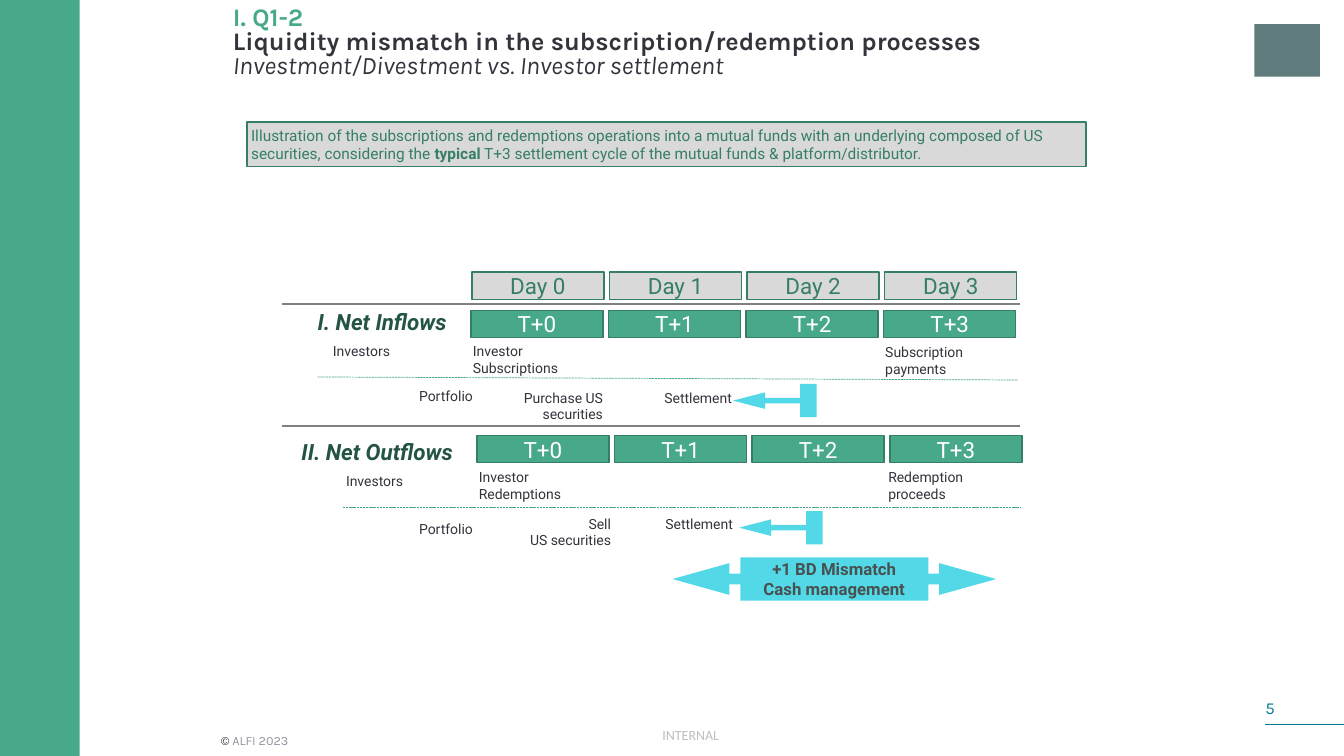
from lxml.etree import SubElement
from pptx import Presentation
from pptx.dml.color import RGBColor
from pptx.enum.dml import MSO_LINE
from pptx.enum.shapes import MSO_CONNECTOR, MSO_SHAPE
from pptx.enum.text import MSO_ANCHOR, PP_ALIGN
from pptx.oxml.ns import qn
from pptx.util import Inches, Pt

THEME = {
    "color": {
        "green": "48A88A", "edge": "367E68", "pine": "245445", "ink": "35323C",
        "mist": "9792A4", "pale": "BFBFBF", "gray": "D9D9D9", "rule": "808080",
        "cyan": "52D8E6", "slate": "495050", "teal": "007C92", "logo": "5F7B7C",
        "white": "FFFFFF",
    },
    # style: colour, then font format values
    "type": {
        "part": ("green", dict(name="Karla", size=Pt(18), bold=True)),
        "title": ("ink", dict(name="Karla", size=Pt(18), bold=True)),
        "sub": ("ink", dict(name="Karla", size=Pt(18), italic=True)),
        "intro": ("edge", dict(name="Roboto", size=Pt(11))),
        "strong": ("edge", dict(name="Roboto", size=Pt(11), bold=True)),
        "day": ("edge", dict(name="Roboto", size=Pt(16))),
        "step": ("white", dict(name="Roboto", size=Pt(16))),
        "flow": ("pine", dict(name="Roboto", size=Pt(16), bold=True, italic=True)),
        "label": ("ink", dict(name="Roboto", size=Pt(10))),
        "gap": ("slate", dict(name="Roboto", size=Pt(12), bold=True)),
        "mark": ("pale", dict(name="Calibri", size=Pt(10))),
        "sign": ("ink", dict(name="Karla", size=Pt(9))),
        "owner": ("mist", dict(name="Karla", size=Pt(9))),
        "page": ("teal", dict(name="Karla", size=Pt(12))),
    },
}
CELL = Inches(0.1)  # the slide is a grid of 133.3 columns by 75 rows
COLS, ROWS = 133.3, 75
LEFT, MID, RIGHT = PP_ALIGN.LEFT, PP_ALIGN.CENTER, PP_ALIGN.RIGHT
RECT = MSO_SHAPE.RECTANGLE

deck = Presentation()
deck.slide_width, deck.slide_height = Inches(13.33), Inches(7.5)
slide = deck.slides.add_slide(deck.slide_layouts[6])


def put(at, paras=(), align=LEFT, kind=None, fill=None, edge=None,
        anchor=MSO_ANCHOR.TOP, pad=0, adjust=()):
    """Add a text box, or a shape if kind is given; paras hold (text, style) runs."""
    spot = [round(n * CELL) for n in at]
    if kind is None:
        item = slide.shapes.add_textbox(*spot)
    else:
        item = slide.shapes.add_shape(kind, *spot)
        item.shadow.inherit = False
        item.fill.solid()
        item.fill.fore_color.rgb = RGBColor.from_string(THEME["color"][fill])
        if edge:
            item.line.color.rgb = RGBColor.from_string(THEME["color"][edge])
            item.line.width = Pt(1)
        else:
            item.line.fill.background()
        for i, part in enumerate(adjust):
            item.adjustments[i] = part
    frame = item.text_frame
    look = dict(word_wrap=True, vertical_anchor=anchor, margin_left=pad * CELL,
                margin_right=pad * CELL, margin_top=0, margin_bottom=0)
    for key, val in look.items():
        setattr(frame, key, int(val) if "margin" in key else val)
    for i, runs in enumerate(paras):
        para = frame.add_paragraph() if i else frame.paragraphs[0]
        para.alignment = align
        for text, style in runs:
            run = para.add_run()
            run.text = text
            tint, form = THEME["type"][style]
            run.font.color.rgb = RGBColor.from_string(THEME["color"][tint])
            for key, val in form.items():
                setattr(run.font, key, val)
    return item


def rule(ends, tint, width, dash=None):
    line = slide.shapes.add_connector(
        MSO_CONNECTOR.STRAIGHT, *[round(n * CELL) for n in ends])
    line.line.color.rgb = RGBColor.from_string(THEME["color"][tint])
    line.line.width = Pt(width)
    if dash:
        line.line.dash_style = dash
    SubElement(line._element.spPr, qn("a:effectLst"))


# Frame of the slide
put((0, 0, 7.9, ROWS), kind=RECT, fill="green")
put((124.4, 2.4, 6.5, 5.2), kind=RECT, fill="logo")
put((125.5, 69.2, 3, 2), [[("5", "page")]], anchor=MSO_ANCHOR.MIDDLE)
rule((COLS, 71.9, 125.5, 71.9), "teal", 0.5)
put((65.7, 72.1, 7, 1.7), [[("INTERNAL", "mark")]])
put((21.9, 72.1, 30.5, 2.7), [[("© ", "sign"), ("ALFI 2023", "owner")]],
    anchor=MSO_ANCHOR.MIDDLE)

title = put((23.1, 2.5, 84.1, 5.4), [
    [("I. Q1-2", "part")],
    [("Liquidity mismatch in the subscription/redemption processes ", "title"),
     ("Investment/Divestment vs. Investor settlement", "sub")],
], anchor=MSO_ANCHOR.BOTTOM)
for para in title.text_frame.paragraphs:
    para.line_spacing = 0.8

put((24.5, 12.1, 83.2, 4.4), [[
    ("Illustration of the subscriptions and redemptions operations into a mutual "
     "funds with an underlying composed of US securities, considering the ", "intro"),
    ("typical", "strong"),
    (" T+3 settlement cycle of the mutual funds & platform/distributor.", "intro"),
]], kind=RECT, fill="gray", edge="edge", anchor=MSO_ANCHOR.MIDDLE, pad=0.4)

# Day and step boxes, four to a row
STEP, WIDE, HIGH = 13.65, 13.1, 2.7
for left, top, word, style, fill in [
    (46.8, 27, "Day ", "day", "gray"),
    (46.7, 30.8, "T+", "step", "green"),
    (47.3, 43.2, "T+", "step", "green"),
]:
    for day in range(4):
        put((left + day * STEP, top, WIDE, HIGH), [[(f"{word}{day}", style)]], MID,
            RECT, fill, "edge", MSO_ANCHOR.MIDDLE)

# Lane headings, labels and settlement arrows
for text, left, top in [("I. Net Inflows", 31.5, 30.6),
                        ("II. Net Outflows", 29.9, 43.5)]:
    put((left, top, 17, HIGH), [[(text, "flow")]])

for lines, left, top, width, align in [
    (["Investors"], 29.3, 34, WIDE, MID),
    (["Investor Subscriptions"], 46.9, 34, WIDE, LEFT),
    (["Subscription payments"], 87.8, 34.1, WIDE, LEFT),
    (["Portfolio"], 33.8, 38.4, WIDE, RIGHT),
    (["Purchase US securities"], 51.2, 38.6, 8.6, RIGHT),
    (["Settlement"], 65.9, 38.6, 8.7, LEFT),
    (["Investors"], 30.6, 46.9, WIDE, MID),
    (["Investor Redemptions"], 47.5, 46.5, 11, LEFT),
    (["Redemption proceeds"], 88.1, 46.5, WIDE, LEFT),
    (["Portfolio"], 33.8, 51.6, WIDE, RIGHT),
    (["Sell", "US securities"], 49.9, 51.1, 10.7, RIGHT),
    (["Settlement"], 66, 51.1, 8.7, LEFT),
]:
    put((left, top, width, 1.7 if width == WIDE else 3.4),
        [[(line, "label")] for line in lines], align)

for left, top in [(72.7, 38.1), (73.3, 50.7)]:
    put((left, top, 8.3, 3.3), kind=MSO_SHAPE.LEFT_ARROW_CALLOUT, fill="cyan",
        adjust=(0.161, 0.25, 0.968, 0.196))

put((66.7, 55.3, 32.1, 4.3),
    [[("+1 BD Mismatch", "gap")], [("Cash management", "gap")]], MID,
    MSO_SHAPE.LEFT_RIGHT_ARROW_CALLOUT, "cyan", anchor=MSO_ANCHOR.MIDDLE,
    adjust=(0.252, 0.367, 1.314, 0.581))

# Rules between and within the lanes
for top in (30.2, 42.3):
    rule((28, top, 101.2, top), "rule", 1.5)
for ends in [(31.5, 37.4, 101, 37.7), (34, 50.3, 101.3, 50.3)]:
    rule(ends, "green", 0.5, MSO_LINE.SQUARE_DOT)

deck.save("out.pptx")
